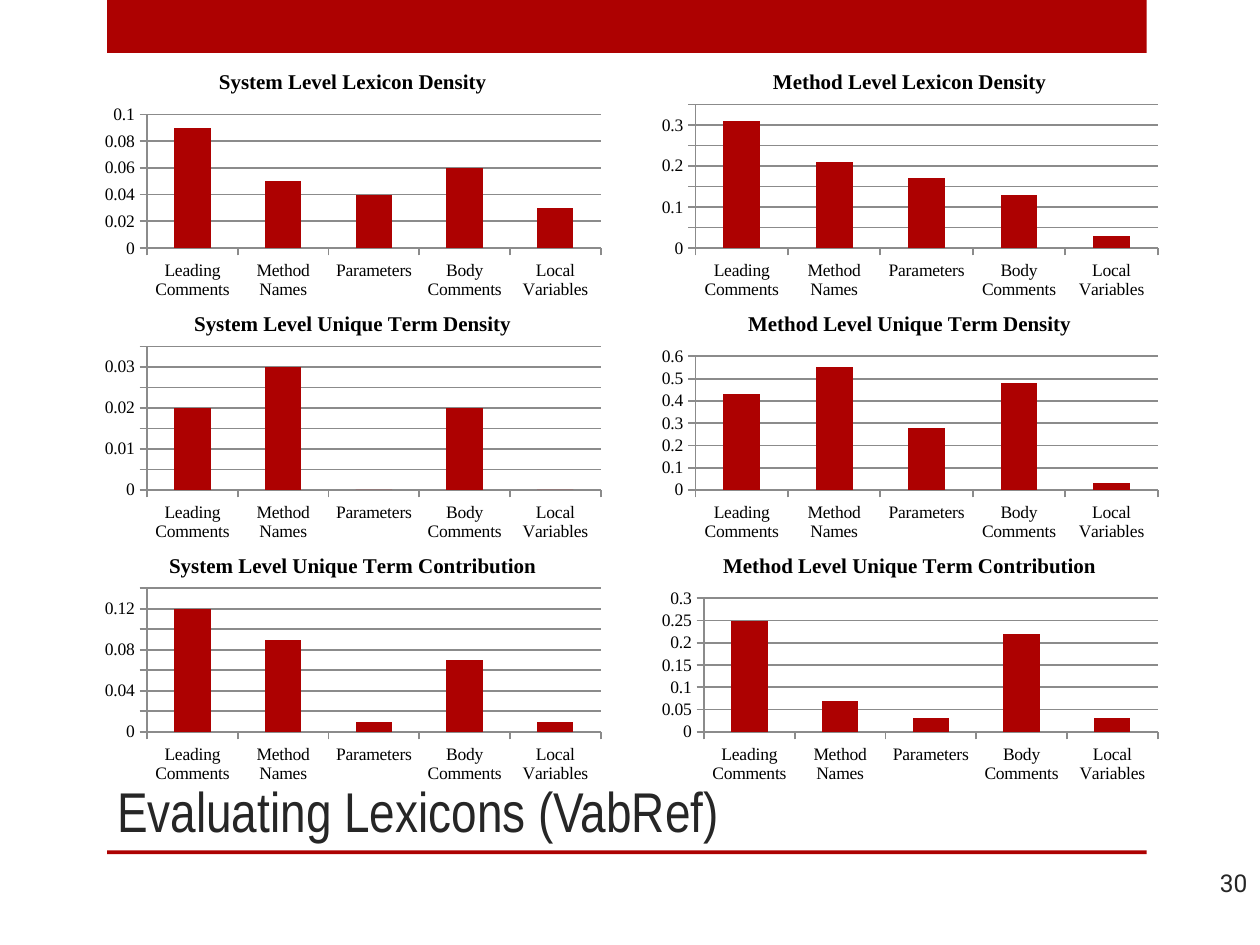
from dataclasses import dataclass
from typing import Any

from pptx import Presentation
from pptx import util as u
from pptx.chart import data as chart_data
from pptx.dml.color import RGBColor
from pptx.enum import chart as charts, shapes, text

RED = RGBColor(0xAD, 0x01, 0x01)
INK = RGBColor(0x26, 0x26, 0x26)
BLACK = RGBColor(0, 0, 0)
GREY = RGBColor(0x8B, 0x8B, 0x8B)

CATEGORIES = ["Leading Comments", "Method Names", "Parameters", "Body Comments", "Local Variables"]
LEVELS = {
    "System Level": {
        "Lexicon Density": (0.09, 0.05, 0.04, 0.06, 0.03),
        "Unique Term Density": (0.02, 0.03, 0, 0.02, 0),
        "Unique Term Contribution": (0.12, 0.09, 0.01, 0.07, 0.01),
    },
    "Method Level": {
        "Lexicon Density": (0.31, 0.21, 0.17, 0.13, 0.03),
        "Unique Term Density": (0.43, 0.55, 0.28, 0.48, 0.03),
        "Unique Term Contribution": (0.25, 0.07, 0.03, 0.22, 0.03),
    },
}


@dataclass
class Deck:
    """Draws styled elements on the current slide, with places on a chart grid or in inches."""

    slide: Any
    title_font: str = "Arial Narrow"
    number_font: str = "Roboto"
    chart_font: str = "Times New Roman"
    grid_left: float = 0.75
    grid_top: float = 0.42
    column_step: float = 4.42
    row_step: float = 1.92
    chart_width: float = 4.1
    chart_height: float = 2

    def style_font(self, font, name, size, color, bold=False):
        font.name, font.size, font.bold = name, u.Pt(size), bold
        font.color.rgb = color

    def bar(self, top, height):
        shape = self.slide.shapes.add_shape(
            shapes.MSO_SHAPE.RECTANGLE, u.Inches(0.85), u.Inches(top), u.Inches(8.25), u.Inches(height))
        shape.shadow.inherit = False
        shape.fill.solid()
        shape.fill.fore_color.rgb = RED
        shape.line.fill.background()

    def set_text(self, shape, words, font_name, size, anchor, alignment):
        frame = shape.text_frame
        frame.text = words
        frame.word_wrap = True
        frame.auto_size = text.MSO_AUTO_SIZE.NONE
        frame.vertical_anchor = anchor
        paragraph = frame.paragraphs[0]
        paragraph.alignment = alignment
        self.style_font(paragraph.font, font_name, size, INK)

    def title(self, words):
        shape = self.slide.shapes.title
        shape.left, shape.top = u.Inches(0.83), u.Inches(5)
        shape.width, shape.height = u.Inches(7.42), u.Inches(1.75)
        self.set_text(shape, words, self.title_font, 32, text.MSO_ANCHOR.BOTTOM, text.PP_ALIGN.LEFT)

    def page_number(self, words):
        shape = self.slide.shapes.add_textbox(
            u.Inches(9.33), u.Inches(6.78), u.Inches(0.67), u.Inches(0.45))
        self.set_text(shape, words, self.number_font, 14, text.MSO_ANCHOR.MIDDLE, text.PP_ALIGN.RIGHT)

    def column_chart(self, column, row, heading, values):
        data = chart_data.CategoryChartData(number_format="General")
        data.categories = CATEGORIES
        data.add_series("Series 1", values)
        chart = self.slide.shapes.add_chart(
            charts.XL_CHART_TYPE.COLUMN_CLUSTERED,
            u.Inches(self.grid_left + column * self.column_step),
            u.Inches(self.grid_top + row * self.row_step),
            u.Inches(self.chart_width), u.Inches(self.chart_height), data).chart
        self.style_font(chart.font, self.chart_font, 18, BLACK)
        chart.has_legend = False
        chart.has_title = True
        chart.chart_title.include_in_layout = False
        chart.chart_title.text_frame.text = heading
        paragraph = chart.chart_title.text_frame.paragraphs[0]
        self.style_font(paragraph.font, self.chart_font, 12, BLACK, bold=True)
        plot = chart.plots[0]
        plot.gap_width = 150
        plot.vary_by_categories = False
        fill = plot.series[0].format.fill
        fill.solid()
        fill.fore_color.rgb = RED
        chart.value_axis.has_major_gridlines = True
        lines = [chart.value_axis.major_gridlines.format.line]
        for axis in (chart.category_axis, chart.value_axis):
            axis.major_tick_mark = charts.XL_TICK_MARK.OUTSIDE
            axis.minor_tick_mark = charts.XL_TICK_MARK.NONE
            self.style_font(axis.tick_labels.font, self.chart_font, 10, BLACK)
            lines.append(axis.format.line)
        for line in lines:
            line.color.rgb = GREY
            line.width = u.Pt(1)


def main():
    presentation = Presentation()
    presentation.slide_width, presentation.slide_height = u.Inches(10), u.Inches(7.5)
    deck = Deck(presentation.slides.add_slide(presentation.slide_layouts[5]))
    deck.bar(0, 0.42)
    deck.bar(6.75, 0.03)
    deck.title("Evaluating Lexicons (VabRef)")
    for column, (level, measures) in enumerate(LEVELS.items()):
        for row, (measure, values) in enumerate(measures.items()):
            deck.column_chart(column, row, f"{level} {measure}", values)
    deck.page_number("30")
    presentation.save("out.pptx")


if __name__ == "__main__":
    main()
